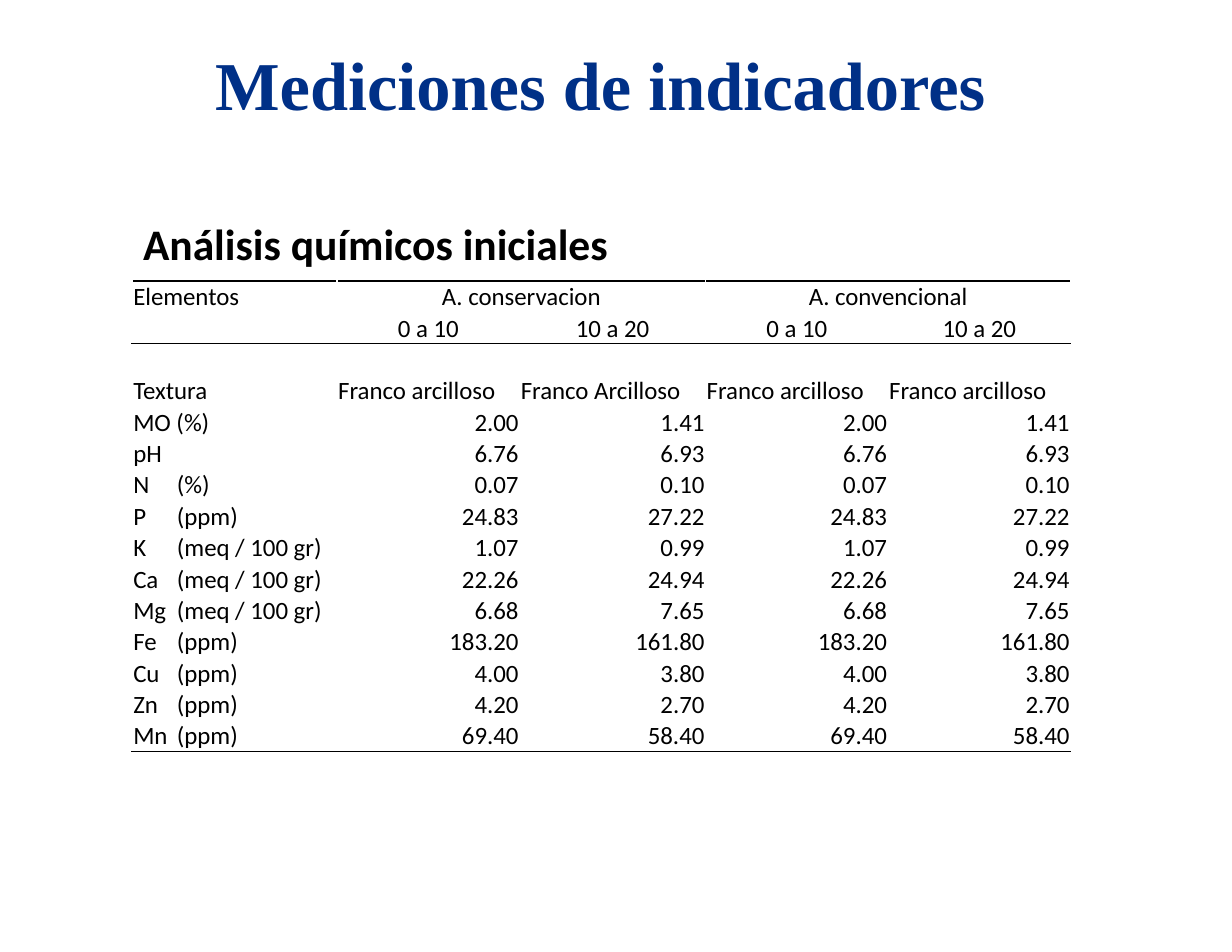
from lxml.etree import SubElement
from pptx import Presentation
from pptx.dml.color import RGBColor
from pptx.enum.text import MSO_ANCHOR as Anchor, MSO_AUTO_SIZE as AutoSize, PP_ALIGN as Align
from pptx.oxml.ns import qn
from pptx.util import Inches, Pt

NAVY = RGBColor(0x00, 0x30, 0x87)
BLACK = RGBColor(0x00, 0x00, 0x00)
WHITE = RGBColor(0xFF, 0xFF, 0xFF)

COLUMN_WIDTHS = [1.83, 1.63, 1.66, 1.63, 1.63]
ROW_HEIGHT = 0.28
UNIT_TAB = 0.39
HEADER_ROWS = [
    ["Elementos", "A. conservacion", "", "A. convencional", ""],
    ["", "0 a 10", "10 a 20", "0 a 10", "10 a 20"],
]
TEXTURE_ROW = ["Textura", "Franco arcilloso", "Franco Arcilloso", "Franco arcilloso", "Franco arcilloso"]
MEASUREMENTS = [
    ("MO (%)", "2.00", "1.41"),
    ("pH", "6.76", "6.93"),
    ("N\t(%)", "0.07", "0.10"),
    ("P\t(ppm)", "24.83", "27.22"),
    ("K\t(meq / 100 gr)", "1.07", "0.99"),
    ("Ca\t(meq / 100 gr)", "22.26", "24.94"),
    ("Mg\t(meq / 100 gr)", "6.68", "7.65"),
    ("Fe\t(ppm)", "183.20", "161.80"),
    ("Cu\t(ppm)", "4.00", "3.80"),
    ("Zn\t(ppm)", "4.20", "2.70"),
    ("Mn\t(ppm)", "69.40", "58.40"),
]


class SlideBuilder:
    body_font = "Calibri"
    title_font = "Times New Roman"
    table_size = 16

    def __init__(self, presentation):
        self.slide = presentation.slides.add_slide(presentation.slide_layouts[6])
        self.slide.background.fill.solid()
        self.slide.background.fill.fore_color.rgb = WHITE

    def add_run(self, paragraph, text, font, size, color=BLACK, bold=False):
        run = paragraph.add_run()
        run.text = text
        run.font.name = font
        run.font.size = Pt(size)
        run.font.bold = bold
        run.font.color.rgb = color

    def add_title(self, text, left, top, width, height):
        shape = self.slide.shapes.add_textbox(Inches(left), Inches(top), Inches(width), Inches(height))
        frame = shape.text_frame
        frame.word_wrap = True
        frame.vertical_anchor = Anchor.MIDDLE
        paragraph = frame.paragraphs[0]
        paragraph.alignment = Align.CENTER
        self.add_run(paragraph, text, self.title_font, 44, NAVY, True)

    def add_heading(self, text, left, top, width, height):
        shape = self.slide.shapes.add_textbox(Inches(left), Inches(top), Inches(width), Inches(height))
        frame = shape.text_frame
        frame.word_wrap = False
        frame.auto_size = AutoSize.SHAPE_TO_FIT_TEXT
        self.add_run(frame.paragraphs[0], text, self.body_font, 28, bold=True)

    def set_borders(self, cell, top, bottom):
        properties = cell._tc.get_or_add_tcPr()
        for side, color in (("L", WHITE), ("R", WHITE), ("T", top), ("B", bottom)):
            line = SubElement(properties, qn(f"a:ln{side}"), w=str(Pt(1)))
            fill = SubElement(line, qn("a:solidFill"))
            SubElement(fill, qn("a:srgbClr"), val=str(color))

    def fill_cell(self, cell, text, alignment):
        cell.vertical_anchor = Anchor.BOTTOM
        cell.margin_left = cell.margin_right = cell.margin_top = Inches(0.01)
        cell.margin_bottom = 0
        cell.fill.background()
        paragraph = cell.text_frame.paragraphs[0]
        paragraph.alignment = alignment
        if "\t" in text:
            tabs = SubElement(paragraph._p.get_or_add_pPr(), qn("a:tabLst"))
            SubElement(tabs, qn("a:tab"), pos=str(Inches(UNIT_TAB)), algn="l")
        if text:
            self.add_run(paragraph, text, self.body_font, self.table_size)
        else:
            SubElement(paragraph._p, qn("a:endParaRPr"), sz=str(self.table_size * 100))

    def add_table(self, rows, left, top):
        row_count, column_count = len(rows), len(COLUMN_WIDTHS)
        table = self.slide.shapes.add_table(
            row_count, column_count, Inches(left), Inches(top),
            Inches(sum(COLUMN_WIDTHS)), Inches(ROW_HEIGHT * row_count),
        ).table
        table.first_row = table.horz_banding = False
        for column, width in zip(table.columns, COLUMN_WIDTHS):
            column.width = Inches(width)
        header_count = len(HEADER_ROWS)
        ruled_edges = {0, header_count, row_count}
        for row_index, values in enumerate(rows):
            table.rows[row_index].height = Inches(ROW_HEIGHT)
            edges = [BLACK if edge in ruled_edges else WHITE for edge in (row_index, row_index + 1)]
            for column_index, text in enumerate(values):
                cell = table.cell(row_index, column_index)
                if column_index == 0 or values is TEXTURE_ROW:
                    alignment = Align.LEFT
                elif row_index < header_count:
                    alignment = Align.CENTER
                else:
                    alignment = Align.RIGHT
                self.set_borders(cell, *edges)
                self.fill_cell(cell, text, alignment)
        for first_column in (1, 3):
            table.cell(0, first_column).merge(table.cell(0, first_column + 1))


def main():
    presentation = Presentation()
    presentation.slide_width = Inches(11)
    presentation.slide_height = Inches(8.5)
    builder = SlideBuilder(presentation)
    builder.add_title("Mediciones de indicadores", 0.73, 0.03, 9.27, 1.42)
    blank_row = [""] * len(COLUMN_WIDTHS)
    value_rows = [[label, *values, *values] for label, *values in MEASUREMENTS]
    builder.add_table([*HEADER_ROWS, blank_row, TEXTURE_ROW, *value_rows], 1.18, 2.51)
    builder.add_heading("Análisis químicos iniciales", 1.18, 1.89, 4.4, 0.57)
    presentation.save("out.pptx")


if __name__ == "__main__":
    main()
